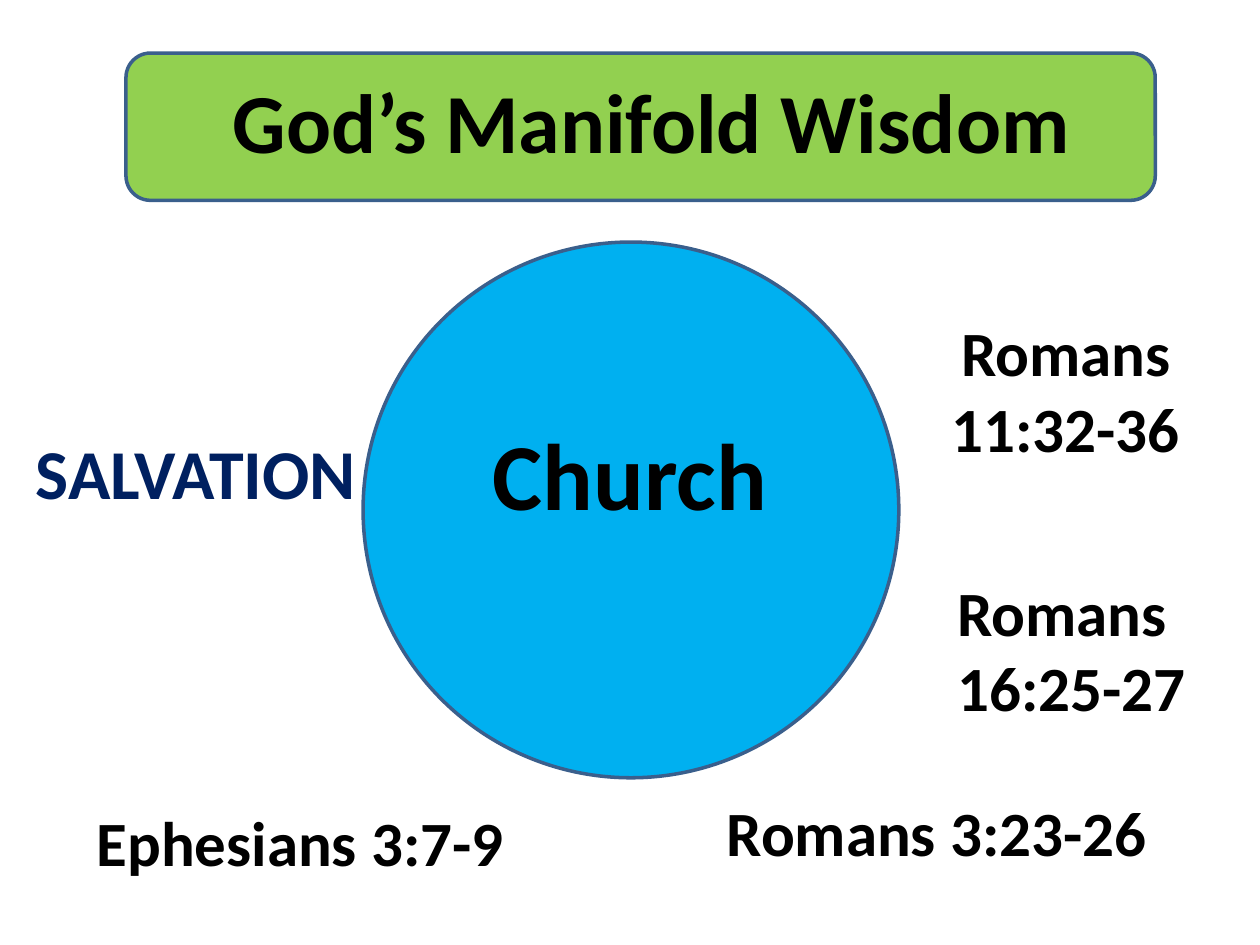
"""Build the slide on God's manifold wisdom and the Church."""
from dataclasses import dataclass

import pptx
import pptx.dml.color
import pptx.enum.shapes
import pptx.enum.text
import pptx.shapes.autoshape
import pptx.slide
import pptx.util

Cm = pptx.util.Cm
RGB = pptx.dml.color.RGBColor
Align = pptx.enum.text.PP_ALIGN
Preset = pptx.enum.shapes.MSO_SHAPE


@dataclass(frozen=True)
class Theme:
    font: str = "Calibri"
    ink: RGB = RGB(0x00, 0x00, 0x00)
    navy: RGB = RGB(0x00, 0x20, 0x60)
    sky: RGB = RGB(0x00, 0xB0, 0xF0)
    green: RGB = RGB(0x92, 0xD0, 0x50)
    outline: RGB = RGB(0x3A, 0x5F, 0x8C)
    outline_width: int = 2
    church_size: int = 54
    title_size: int = 48
    salvation_size: int = 40
    verse_size: int = 36


THEME = Theme()


@dataclass(frozen=True)
class Box:
    left: float
    top: float
    width: float
    height: float

    def lengths(self) -> tuple[Cm, Cm, Cm, Cm]:
        return Cm(self.left), Cm(self.top), Cm(self.width), Cm(self.height)


@dataclass(frozen=True)
class Panel:
    preset: Preset
    box: Box
    fill: RGB


@dataclass(frozen=True)
class Label:
    text: str
    box: Box
    size: int = THEME.verse_size
    color: RGB = THEME.ink
    align: Align = Align.LEFT
    wrap: bool = True


CHURCH_CIRCLE = Panel(Preset.OVAL, Box(7.32, 4.88, 10.8, 10.8), THEME.sky)
TITLE_BANNER = Panel(Preset.ROUNDED_RECTANGLE, Box(2.54, 1.07, 20.75, 2.97), THEME.green)

CHURCH = Label("Church", Box(8.99, 8.26, 7.42, 2.57), THEME.church_size, align=Align.CENTER)
TITLE = Label("God’s Manifold Wisdom", Box(3.61, 1.27, 19.05, 2.31),
              THEME.title_size, align=Align.CENTER)
SALVATION = Label("SALVATION", Box(0.43, 8.53, 7.04, 1.96), THEME.salvation_size,
                  THEME.navy, Align.CENTER, wrap=False)
VERSES = (
    Label("Ephesians 3:7-9", Box(1.7, 16.08, 9.32, 1.8)),
    Label("Romans 3:23-26", Box(14.4, 15.88, 9.73, 1.8)),
    Label("Romans 11:32-36", Box(18.21, 6.2, 6.55, 3.33), align=Align.CENTER),
    Label("Romans 16:25-27", Box(19.05, 11.43, 5.72, 3.33)),
)


def draw_panel(slide: pptx.slide.Slide, panel: Panel) -> pptx.shapes.autoshape.Shape:
    """Draw one filled and outlined panel."""
    shape = slide.shapes.add_shape(panel.preset, *panel.box.lengths())
    shape.shadow.inherit = False
    shape.fill.solid()
    shape.fill.fore_color.rgb = panel.fill
    shape.line.color.rgb = THEME.outline
    shape.line.width = pptx.util.Pt(THEME.outline_width)
    return shape


def draw_label(slide: pptx.slide.Slide, label: Label) -> pptx.shapes.autoshape.Shape:
    """Draw one bold text label."""
    shape = slide.shapes.add_textbox(*label.box.lengths())
    frame = shape.text_frame
    frame.word_wrap = label.wrap
    frame.auto_size = pptx.enum.text.MSO_AUTO_SIZE.SHAPE_TO_FIT_TEXT
    paragraph = frame.paragraphs[0]
    paragraph.text = label.text
    paragraph.alignment = label.align
    paragraph.font.name = THEME.font
    paragraph.font.size = pptx.util.Pt(label.size)
    paragraph.font.bold = True
    paragraph.font.color.rgb = label.color
    return shape


def main() -> None:
    """Build and save the presentation."""
    deck = pptx.Presentation()
    deck.slide_width, deck.slide_height = Cm(25.4), Cm(19.05)
    slide = deck.slides.add_slide(deck.slide_layouts[6])
    draw_panel(slide, CHURCH_CIRCLE)
    draw_label(slide, CHURCH)
    draw_panel(slide, TITLE_BANNER)
    for label in (TITLE, SALVATION, *VERSES):
        draw_label(slide, label)
    deck.save("out.pptx")


if __name__ == "__main__":
    main()
